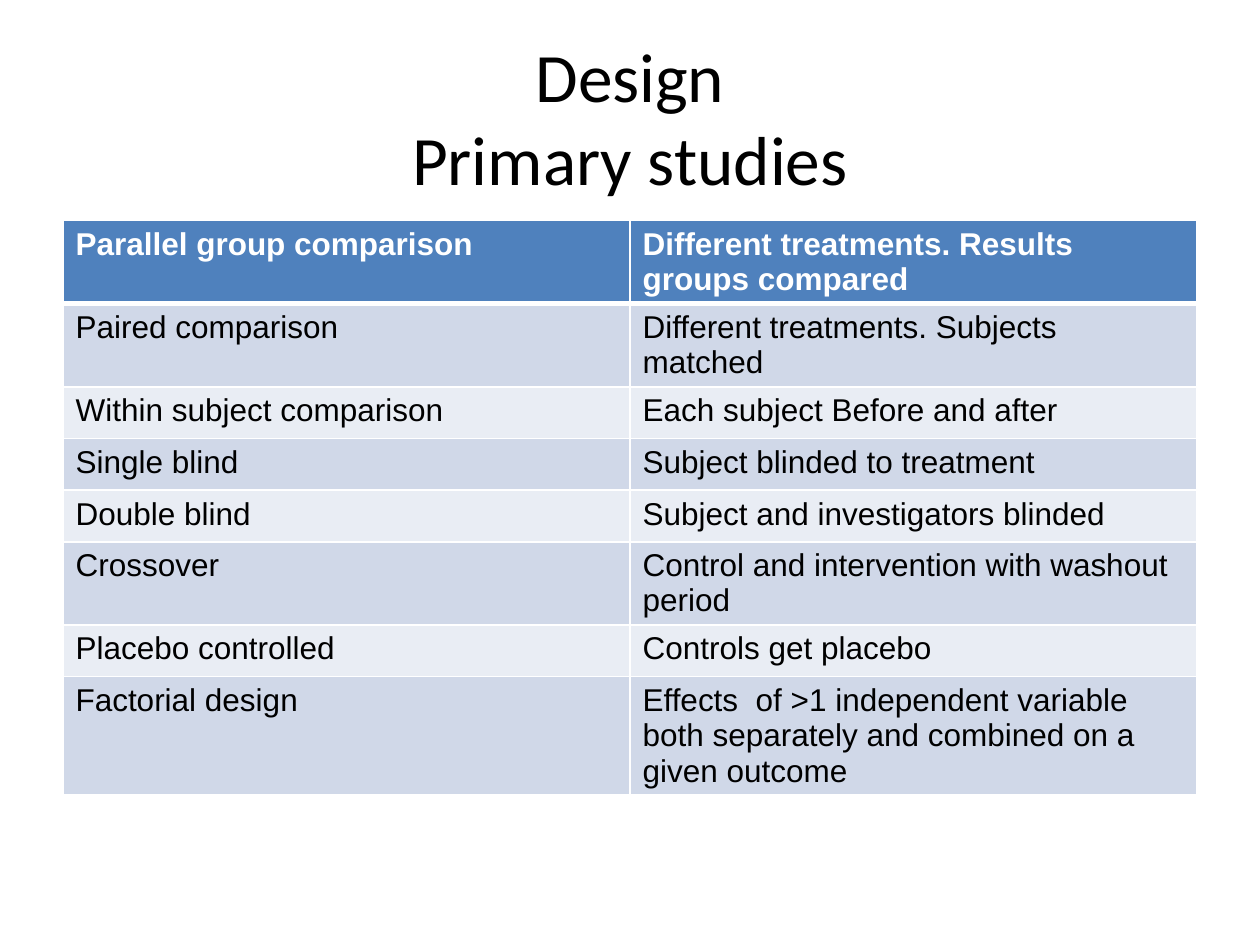
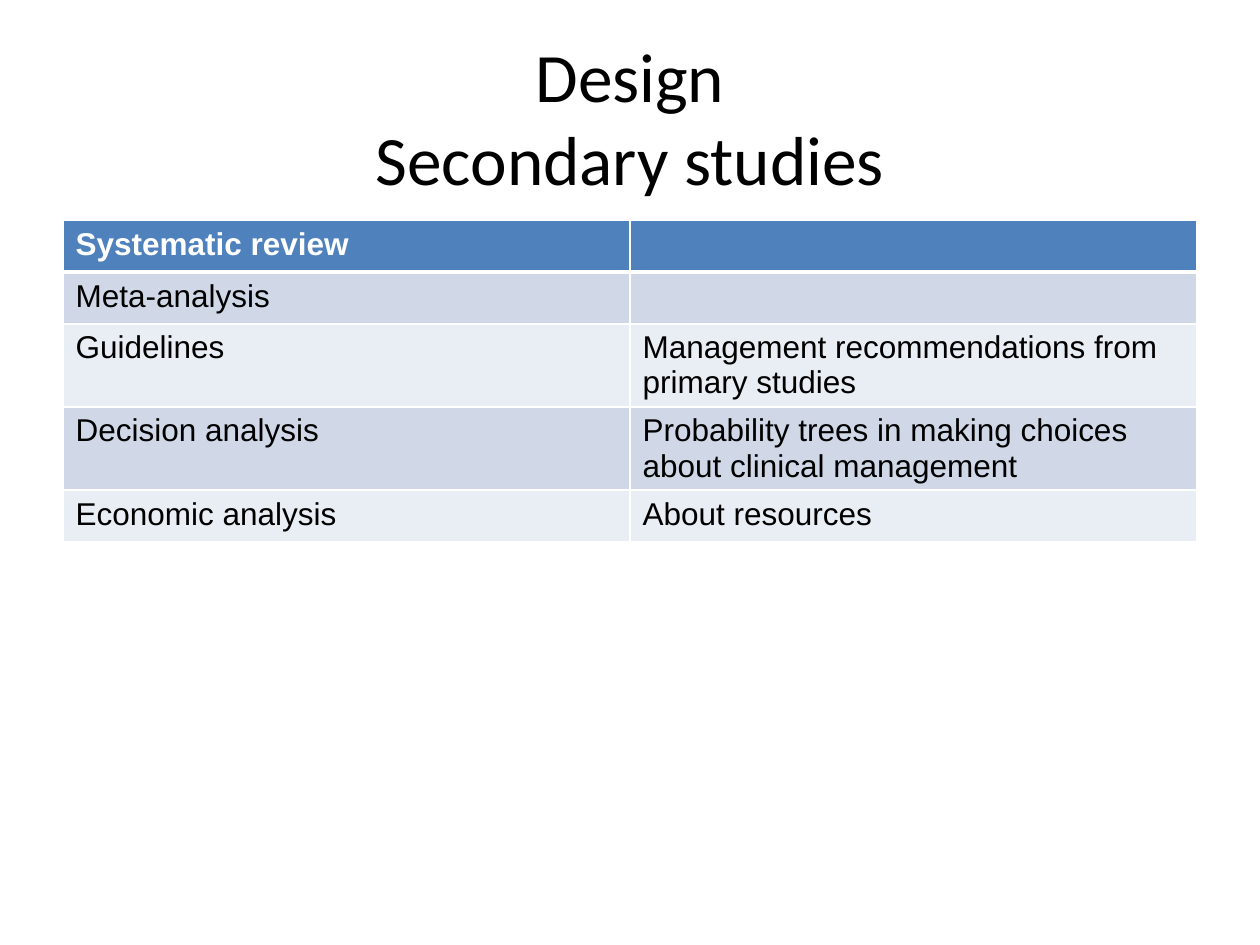
from lxml import etree
from pptx import Presentation
from pptx.dml.color import RGBColor
from pptx.enum.text import MSO_ANCHOR, PP_ALIGN
from pptx.oxml.ns import qn
from pptx.util import Inches, Pt

CENTER = PP_ALIGN.CENTER
MIDDLE = MSO_ANCHOR.MIDDLE
TITLE_ONLY = 5

COLORS = {
    "text": "000000",
    "header": "4F81BD",
    "header_text": "FFFFFF",
    "border": "FFFFFF",
    "odd_row": "D0D8E8",
    "even_row": "E9EDF4",
}

PRIMARY_STUDIES = [
    ("Parallel group comparison", "Different treatments. Results groups compared"),
    ("Paired comparison", "Different treatments. Subjects matched"),
    ("Within subject comparison", "Each subject Before and after"),
    ("Single blind", "Subject blinded to treatment"),
    ("Double blind", "Subject and investigators blinded"),
    ("Crossover", "Control and intervention with washout period"),
    ("Placebo controlled", "Controls get placebo"),
    ("Factorial design",
     "Effects  of >1 independent variable both separately and combined on a given outcome"),
]

SECONDARY_STUDIES = [
    ("Systematic review", ""),
    ("Meta-analysis", ""),
    ("Guidelines", "Management recommendations from primary studies"),
    ("Decision analysis", "Probability trees in making choices about clinical management"),
    ("Economic analysis", "About resources"),
]


class Deck:
    """Holds the shared style and the slide being built."""

    left, width = Inches(0.5), Inches(9)
    title_top, title_height = Inches(0.3), Inches(1.25)
    table_top, row_height = Inches(1.75), Inches(0.41)

    def __init__(self):
        self.presentation = Presentation()
        self.presentation.slide_width = Inches(10)
        self.presentation.slide_height = Inches(7.5)
        self.slide = None

    def add_slide(self):
        layout = self.presentation.slide_layouts[TITLE_ONLY]
        self.slide = self.presentation.slides.add_slide(layout)

    def style_font(self, font, name, size, color, bold=False):
        font.name = name
        font.size = Pt(size)
        font.bold = bold
        font.color.rgb = RGBColor.from_string(COLORS[color])

    def add_title(self, *lines):
        title = self.slide.shapes.title
        title.left, title.top = self.left, self.title_top
        title.width, title.height = self.width, self.title_height
        frame = title.text_frame
        frame.vertical_anchor = MIDDLE
        frame.text = "\v".join(lines)
        heading = frame.paragraphs[0]
        heading.alignment = CENTER
        self.style_font(heading.font, "Calibri", 39.6, "text")

    def add_borders(self, cell, top, bottom):
        """Draw all four cell borders; top and bottom are widths in points."""
        properties = cell._tc.get_or_add_tcPr()
        for side, width in (("L", 1), ("R", 1), ("T", top), ("B", bottom)):
            line = etree.SubElement(properties, qn(f"a:ln{side}"), w=str(Pt(width)))
            fill = etree.SubElement(line, qn("a:solidFill"))
            etree.SubElement(fill, qn("a:srgbClr"), val=COLORS["border"])

    def add_table(self, rows):
        table = self.slide.shapes.add_table(
            len(rows), len(rows[0]), self.left, self.table_top,
            self.width, self.row_height * len(rows)).table
        for row_index, row in enumerate(rows):
            is_header = row_index == 0
            if is_header:
                fill_color = "header"
            else:
                fill_color = "odd_row" if row_index % 2 else "even_row"
            for column, wording in enumerate(row):
                cell = table.cell(row_index, column)
                self.add_borders(cell, top=3 if row_index == 1 else 1,
                                 bottom=3 if is_header else 1)
                cell.fill.solid()
                cell.fill.fore_color.rgb = RGBColor.from_string(COLORS[fill_color])
                cell.text = wording
                self.style_font(cell.text_frame.paragraphs[0].font, "Arial", 18,
                                "header_text" if is_header else "text", is_header)


def main():
    deck = Deck()
    for subject, studies in (("Primary studies", PRIMARY_STUDIES),
                             ("Secondary studies", SECONDARY_STUDIES)):
        deck.add_slide()
        deck.add_title("Design", subject)
        deck.add_table(studies)
    deck.presentation.save("out.pptx")


if __name__ == "__main__":
    main()
